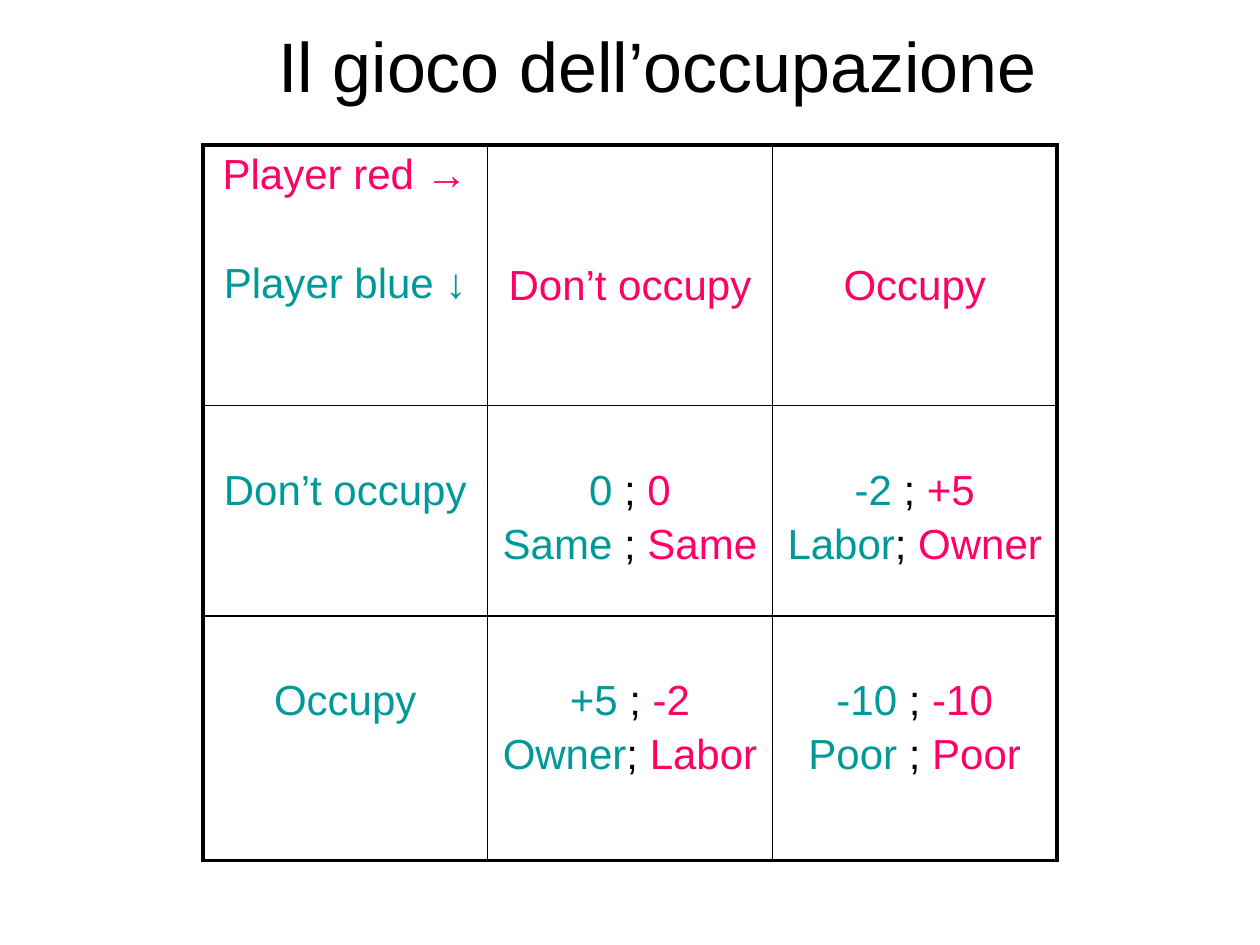
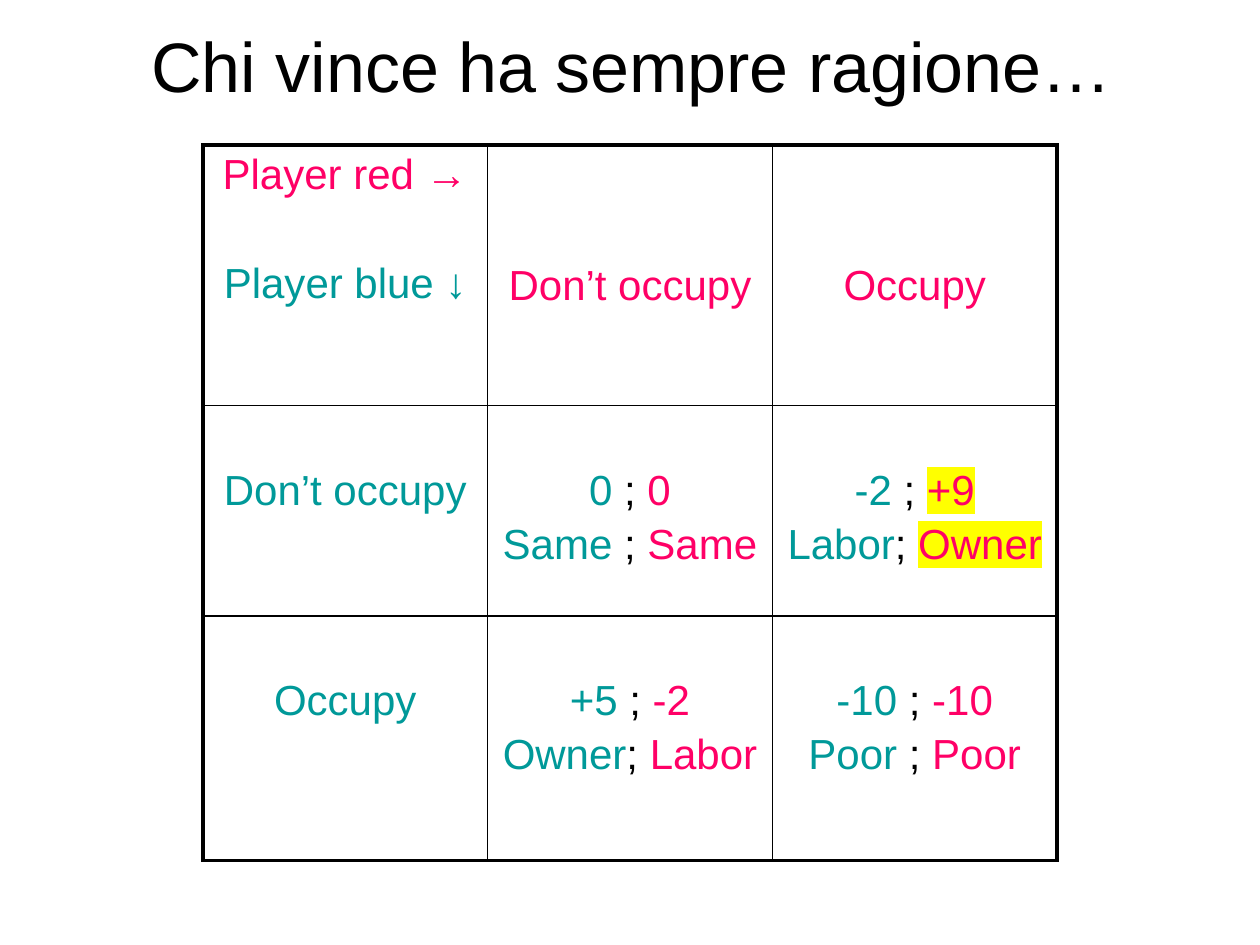
from dataclasses import dataclass

import pptx
import pptx.dml.color
import pptx.enum.text
import pptx.oxml
import pptx.oxml.ns
import pptx.slide
import pptx.table
import pptx.text.text
import pptx.util

EMU_PER_PX = 9144
PAGE_WIDTH, PAGE_HEIGHT = 1000, 750
FONT = "Arial"
BLACK, RED, BLUE, YELLOW = "000000", "FF0066", "009999", "FFFF00"
TITLE_TOP, TITLE_HEIGHT, TITLE_SIZE = 13, 77, 40
TABLE_LEFT, TABLE_TOP = 161, 115
COLUMN_WIDTHS = (226, 226, 226)
ROW_HEIGHTS = (207, 167, 194)
TEXT_SIZE, LINE_GAP, LINE_PITCH = 24, 4, 31.6
MARGIN_X, MARGIN_Y, SKIPPED_LINE = 10, 5, 44
OUTER_LINE, INNER_LINE = 2.25, 1
CENTER = pptx.enum.text.PP_ALIGN.CENTER
LEFT = pptx.enum.text.PP_ALIGN.LEFT


@dataclass(frozen=True)
class Span:
    text: str
    color: str
    highlight: str | None = None


@dataclass(frozen=True)
class Entry:
    lines: tuple[tuple[Span, ...], ...]
    lines_above: int = 1
    lines_between: int = 0


@dataclass(frozen=True)
class Title:
    text: str
    left: int
    width: int
    align: pptx.enum.text.PP_ALIGN
    wrap: bool


@dataclass(frozen=True)
class Game:
    title: Title
    owner_gain: str
    owner_highlight: str | None = None


GAMES = (
    Game(Title("Il gioco dell’occupazione", 211, 628, LEFT, False), "+5"),
    Game(Title("Chi vince ha sempre ragione…", 0, 1002, CENTER, True), "+9", YELLOW),
)


def px(length: int) -> pptx.util.Emu:
    return pptx.util.Emu(length * EMU_PER_PX)


def rgb(color: str) -> pptx.dml.color.RGBColor:
    return pptx.dml.color.RGBColor.from_string(color)


def label(text: str, color: str, lines_above: int = 1) -> Entry:
    return Entry(((Span(text, color),),), lines_above)


def pair(blue: str, separator: str, red: str, highlight: str | None = None) -> tuple[Span, ...]:
    return Span(blue, BLUE), Span(separator, BLACK), Span(red, RED, highlight)


def payoff_rows(game: Game) -> tuple[tuple[Entry, ...], ...]:
    mark = game.owner_highlight
    players = Entry(((Span("Player red →", RED),), (Span("Player blue ↓", BLUE),)), 0, 1)
    return (
        (players, label("Don’t occupy", RED, 2), label("Occupy", RED, 2)),
        (
            label("Don’t occupy", BLUE),
            Entry((pair("0", " ; ", "0"), pair("Same", " ; ", "Same"))),
            Entry((pair("-2", " ; ", game.owner_gain, mark), pair("Labor", "; ", "Owner", mark))),
        ),
        (
            label("Occupy", BLUE),
            Entry((pair("+5", " ; ", "-2"), pair("Owner", "; ", "Labor"))),
            Entry((pair("-10", " ; ", "-10"), pair("Poor", " ; ", "Poor"))),
        ),
    )


def set_font(para: pptx.text.text._Paragraph, size: int) -> None:
    para.font.name = FONT
    para.font.size = pptx.util.Pt(size)


def write_line(para: pptx.text.text._Paragraph, spans: tuple[Span, ...]) -> None:
    para.alignment = CENTER
    set_font(para, TEXT_SIZE)
    for part in spans:
        span = para.add_run()
        span.text = part.text
        font = para.font if len(spans) == 1 else span.font
        font.color.rgb = rgb(part.color)
        if part.highlight:
            properties = span._r.get_or_add_rPr()
            highlight = pptx.oxml.parse_xml(
                f'<a:highlight {pptx.oxml.ns.nsdecls("a")}>'
                f'<a:srgbClr val="{part.highlight}"/></a:highlight>'
            )
            properties.append(highlight)


def set_borders(cell: pptx.table._Cell, row: int, column: int) -> None:
    edges = {
        "lnL": column == 0,
        "lnR": column == len(COLUMN_WIDTHS) - 1,
        "lnT": row == 0,
        "lnB": row == len(ROW_HEIGHTS) - 1,
    }
    properties = cell._tc.get_or_add_tcPr()
    for tag, is_outer in edges.items():
        width = pptx.util.Pt(OUTER_LINE if is_outer else INNER_LINE)
        properties.append(pptx.oxml.parse_xml(
            f'<a:{tag} {pptx.oxml.ns.nsdecls("a")} w="{int(width)}">'
            f'<a:solidFill><a:srgbClr val="{BLACK}"/></a:solidFill></a:{tag}>'
        ))


def write_cell(cell: pptx.table._Cell, entry: Entry) -> None:
    cell.margin_left = cell.margin_right = px(MARGIN_X)
    cell.margin_top = px(MARGIN_Y + entry.lines_above * SKIPPED_LINE)
    cell.margin_bottom = px(MARGIN_Y)
    cell.fill.background()
    for index, spans in enumerate(entry.lines):
        para = cell.text_frame.add_paragraph() if index else cell.text_frame.paragraphs[0]
        if index:
            para.space_before = pptx.util.Pt(LINE_GAP + entry.lines_between * LINE_PITCH)
        write_line(para, spans)


def add_title(page: pptx.slide.Slide, title: Title) -> None:
    box = page.shapes.add_textbox(
        px(title.left), px(TITLE_TOP), px(title.width), px(TITLE_HEIGHT)
    )
    frame = box.text_frame
    frame.word_wrap = title.wrap
    frame.auto_size = pptx.enum.text.MSO_AUTO_SIZE.SHAPE_TO_FIT_TEXT
    para = frame.paragraphs[0]
    para.text = title.text
    para.alignment = title.align
    set_font(para, TITLE_SIZE)
    para.font.color.rgb = rgb(BLACK)


def add_payoff_table(page: pptx.slide.Slide, rows: tuple[tuple[Entry, ...], ...]) -> None:
    table = page.shapes.add_table(
        len(ROW_HEIGHTS), len(COLUMN_WIDTHS), px(TABLE_LEFT), px(TABLE_TOP),
        px(sum(COLUMN_WIDTHS)), px(sum(ROW_HEIGHTS)),
    ).table
    table.first_row = table.horz_banding = False
    for column, width in zip(table.columns, COLUMN_WIDTHS):
        column.width = px(width)
    for row, height in zip(table.rows, ROW_HEIGHTS):
        row.height = px(height)
    for row_index, entries in enumerate(rows):
        for column_index, entry in enumerate(entries):
            cell = table.cell(row_index, column_index)
            set_borders(cell, row_index, column_index)
            write_cell(cell, entry)


def main() -> None:
    deck = pptx.Presentation()
    deck.slide_width, deck.slide_height = px(PAGE_WIDTH), px(PAGE_HEIGHT)
    for game in GAMES:
        page = deck.slides.add_slide(deck.slide_layouts[6])
        add_payoff_table(page, payoff_rows(game))
        add_title(page, game.title)
    deck.save("out.pptx")


if __name__ == "__main__":
    main()
